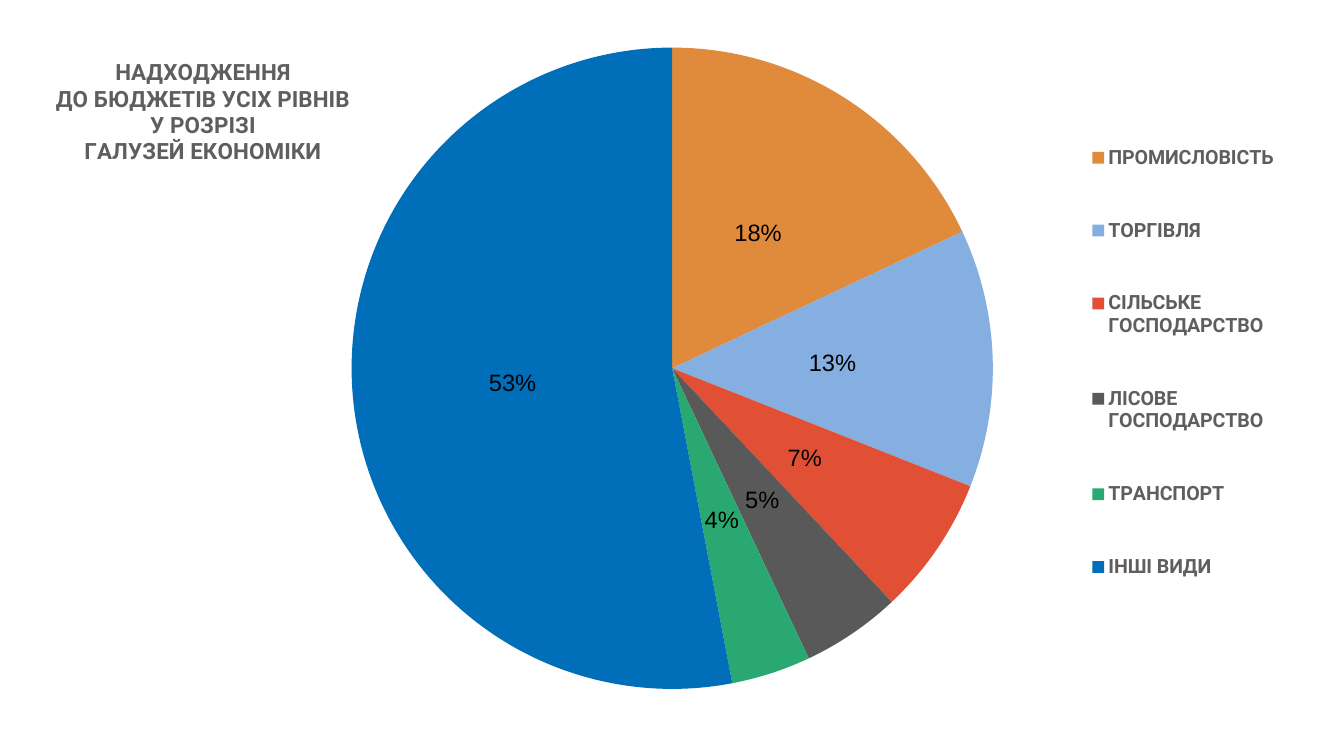
import pptx
import pptx.chart.data
import pptx.dml.color
import pptx.enum.chart
import pptx.oxml
import pptx.oxml.ns
import pptx.util

Inches = pptx.util.Inches
Pt = pptx.util.Pt
RGBColor = pptx.dml.color.RGBColor

GREY = RGBColor(0x5E, 0x5E, 0x5E)
BLACK = RGBColor(0x00, 0x00, 0x00)
ORANGE = RGBColor(0xE0, 0x8A, 0x3C)
LIGHT_BLUE = RGBColor(0x85, 0xAF, 0xE0)
RED = RGBColor(0xE1, 0x4F, 0x35)
DARK_GREY = RGBColor(0x59, 0x59, 0x59)
GREEN = RGBColor(0x29, 0xA9, 0x71)
BLUE = RGBColor(0x00, 0x6E, 0xB9)

TITLE = "НАДХОДЖЕННЯ\nДО БЮДЖЕТІВ УСІХ РІВНІВ\nУ РОЗРІЗІ\nГАЛУЗЕЙ ЕКОНОМІКИ"
SECTORS = [
    ("ПРОМИСЛОВІСТЬ", 18, ORANGE),
    ("ТОРГІВЛЯ", 13, LIGHT_BLUE),
    ("СІЛЬСЬКЕ ГОСПОДАРСТВО", 7, RED),
    ("ЛІСОВЕ ГОСПОДАРСТВО", 5, DARK_GREY),
    ("ТРАНСПОРТ", 4, GREEN),
    ("ІНШІ ВИДИ", 53, BLUE),
]


class PieSlide:
    """Chart style and the slide it is applied to."""

    text_font = "Roboto"
    label_font = "Arial"

    def __init__(self, slide):
        self.slide = slide

    def style_font(self, font, size, color, name, bold=False):
        font.size, font.name, font.bold = Pt(size), name, bold
        font.color.rgb = color

    def place(self, part, index, **layout):
        """Give a chart part a manual layout, in fractions of the chart."""
        qn = pptx.oxml.ns.qn
        old = part.find(qn("c:layout"))
        if old is not None:
            part.remove(old)
        settings = "".join(f'<c:{key} val="{value}"/>' for key, value in layout.items())
        part.insert(index, pptx.oxml.parse_xml(
            f'<c:layout {pptx.oxml.ns.nsdecls("c")}>'
            f"<c:manualLayout>{settings}</c:manualLayout></c:layout>"))

    def pie(self, left, top, width, height, sectors):
        data = pptx.chart.data.CategoryChartData()
        data.categories = [name for name, _, _ in sectors]
        data.add_series("Series 1", [share for _, share, _ in sectors])
        chart = self.slide.shapes.add_chart(
            pptx.enum.chart.XL_CHART_TYPE.PIE, Inches(left), Inches(top),
            Inches(width), Inches(height), data).chart
        self.style_font(chart.font, 10, GREY, self.text_font)
        plot = chart.plots[0]
        plot.vary_by_categories = True
        for index, (_, _, color) in enumerate(sectors):
            fill = plot.series[0].points[index].format.fill
            fill.solid()
            fill.fore_color.rgb = color
        plot.has_data_labels = True
        labels = plot.data_labels
        labels.show_value, labels.show_percentage = False, True
        labels.number_format, labels.number_format_is_linked = "0%", False
        labels.position = pptx.enum.chart.XL_LABEL_POSITION.CENTER
        self.style_font(labels.font, 33.8, BLACK, self.label_font)
        plot_area = chart.element.find(".//" + pptx.oxml.ns.qn("c:plotArea"))
        self.place(plot_area, 0, layoutTarget="inner", xMode="edge", yMode="edge",
                   x=0.005, y=0.005, w=0.99, h=0.988)
        return chart

    def title(self, chart, text, x, y):
        chart.has_title = True
        frame = chart.chart_title.text_frame
        frame.text = text
        for paragraph in frame.paragraphs:
            self.style_font(paragraph.font, 32, GREY, self.text_font, True)
            for run in paragraph.runs:
                self.style_font(run.font, 32, GREY, self.text_font, True)
        self.place(chart.chart_title.element if hasattr(chart.chart_title, "element")
                   else chart.element.find(".//" + pptx.oxml.ns.qn("c:title")),
                   1, xMode="edge", yMode="edge", x=x, y=y)

    def legend(self, chart, x, y, w, h):
        chart.has_legend = True
        chart.legend.position = pptx.enum.chart.XL_LEGEND_POSITION.RIGHT
        chart.legend.include_in_layout = False
        self.style_font(chart.legend.font, 28, GREY, self.text_font, True)
        legend = chart.element.find(".//" + pptx.oxml.ns.qn("c:legend"))
        index = 0 if legend.find(pptx.oxml.ns.qn("c:legendPos")) is None else 1
        self.place(legend, index, xMode="edge", yMode="edge", x=x, y=y, w=w, h=h)


def main():
    presentation = pptx.Presentation()
    presentation.slide_width = Inches(26.67)
    presentation.slide_height = Inches(15)
    page = PieSlide(presentation.slides.add_slide(presentation.slide_layouts[6]))

    # Budget revenue by sector
    revenue = page.pie(0.98, 0.88, 24.72, 12.88, SECTORS)

    # Heading at the top left, legend at the right
    page.title(revenue, TITLE, x=0.004, y=0.02)
    page.legend(revenue, x=0.83, y=0.08, w=0.16, h=0.82)

    presentation.save("out.pptx")


if __name__ == "__main__":
    main()
